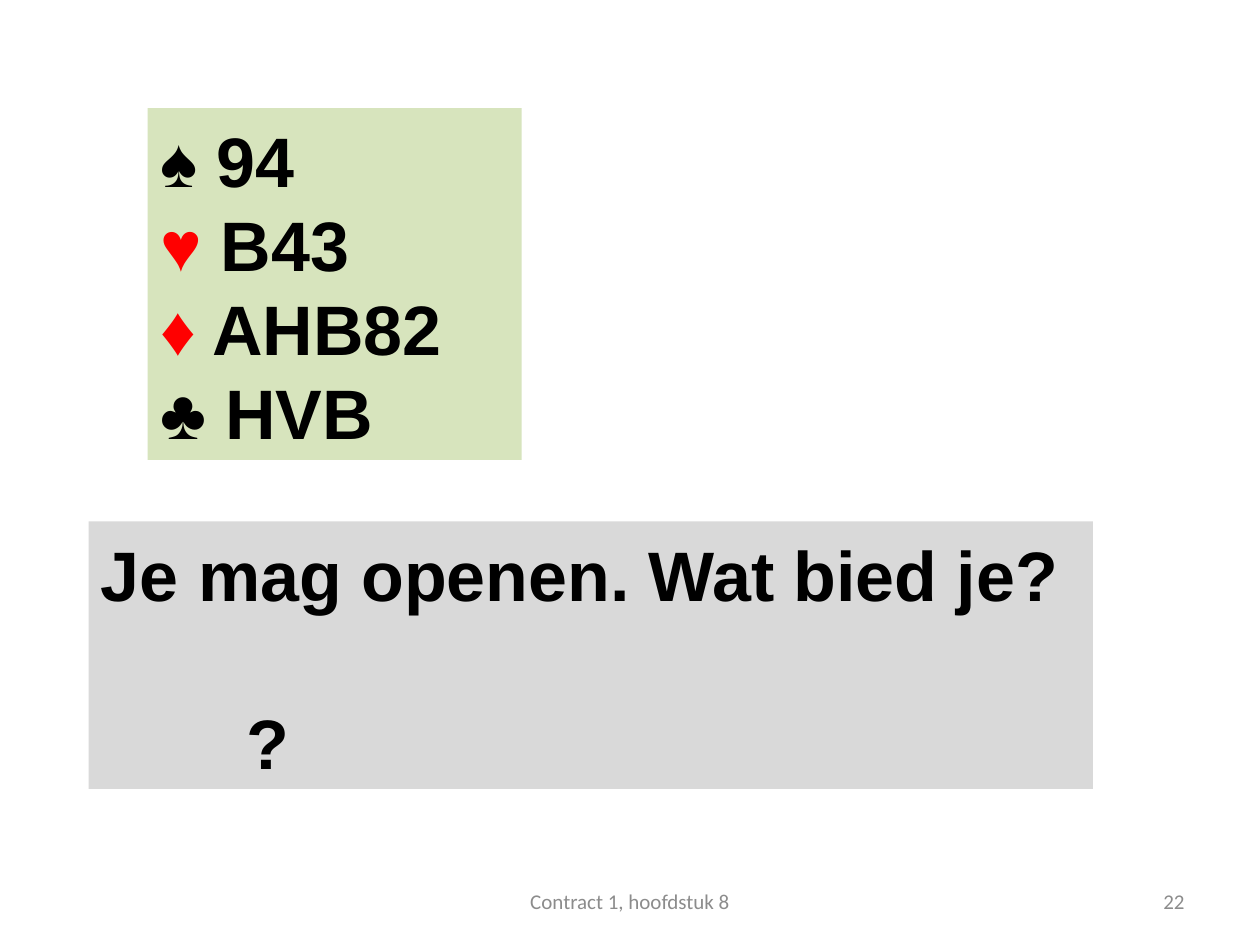
from pptx import Presentation
from pptx import util as u
from pptx.dml import color
from pptx.enum import shapes, text

Pt = u.Pt
HEX = {"hand": "D7E4BD", "ask": "D9D9D9", "ink": "000000",
       "red": "FF0000", "note": "8C8C8C"}
BIG = {"size": Pt(40), "name": "Arial", "bold": True}
SMALL = {"size": Pt(12), "name": "Calibri"}
LEAD = 48
HAND = (("♠", "94", "ink"), ("♥", "B43", "red"),
        ("♦", "AHB82", "red"), ("♣", "HVB", "ink"))


def rgb(key):
    """Return the named colour."""
    return color.RGBColor.from_string(HEX[key])


def assign(item, vals):
    """Set each attribute of item from a dict."""
    for key, val in vals.items():
        setattr(item, key, val)


def write(para, words, style, ink):
    """Add one styled run to a paragraph."""
    run = para.add_run()
    run.text = words
    assign(run.font, style)
    run.font.color.rgb = rgb(ink)


def panel(slide, box, fill):
    """Draw a filled panel and return its text frame."""
    shape = slide.shapes.add_shape(
        shapes.MSO_SHAPE.RECTANGLE, *map(Pt, box))
    shape.shadow.inherit = False
    shape.fill.solid()
    shape.fill.fore_color.rgb = rgb(fill)
    shape.line.fill.background()
    frame = shape.text_frame
    assign(frame, {"word_wrap": True, "margin_top": Pt(5.6),
                   "margin_bottom": 0,
                   "vertical_anchor": text.MSO_ANCHOR.TOP})
    return frame


def line(frame, row):
    """Return the paragraph for a row, set to the common leading."""
    para = frame.add_paragraph() if row else frame.paragraphs[0]
    assign(para, {"alignment": text.PP_ALIGN.LEFT, "line_spacing": Pt(LEAD)})
    return para


def hand(slide, box):
    """Place the hand of cards, one suit to a line."""
    frame = panel(slide, box, "hand")
    for row, (suit, cards, ink) in enumerate(HAND):
        para = line(frame, row)
        write(para, suit, BIG, ink)
        write(para, " " + cards, BIG, "ink")


def ask(slide, box):
    """Place the question with an indented answer mark."""
    frame = panel(slide, box, "ask")
    write(line(frame, 0), "Je mag openen. Wat bied je?", BIG, "ink")
    para = line(frame, 1)
    para.space_before = Pt(LEAD)
    para._p.get_or_add_pPr().set("marL", str(Pt(83)))
    write(para, "?", BIG, "ink")


def foot(slide, box):
    """Place the centred footer and the page number at the right."""
    left, top, wide, high = box
    parts = ((0, 228, "Contract 1, hoofdstuk 8", text.PP_ALIGN.CENTER),
             (wide - 168, 168, "22", text.PP_ALIGN.RIGHT))
    for shift, span, words, side in parts:
        note = slide.shapes.add_textbox(
            *map(Pt, (left + shift, top, span, high)))
        frame = note.text_frame
        assign(frame, {"word_wrap": True,
                       "vertical_anchor": text.MSO_ANCHOR.MIDDLE})
        para = frame.paragraphs[0]
        para.alignment = side
        write(para, words, SMALL, "note")


def main():
    """Build and save the slide."""
    deck = Presentation()
    assign(deck, {"slide_width": Pt(720), "slide_height": Pt(540)})
    slide = deck.slides.add_slide(deck.slide_layouts[6])
    hand(slide, (84.4, 61.8, 213.8, 201))
    ask(slide, (50.6, 298, 574, 152.8))
    foot(slide, (246, 500.5, 438, 28.8))
    deck.save("out.pptx")


if __name__ == "__main__":
    main()
